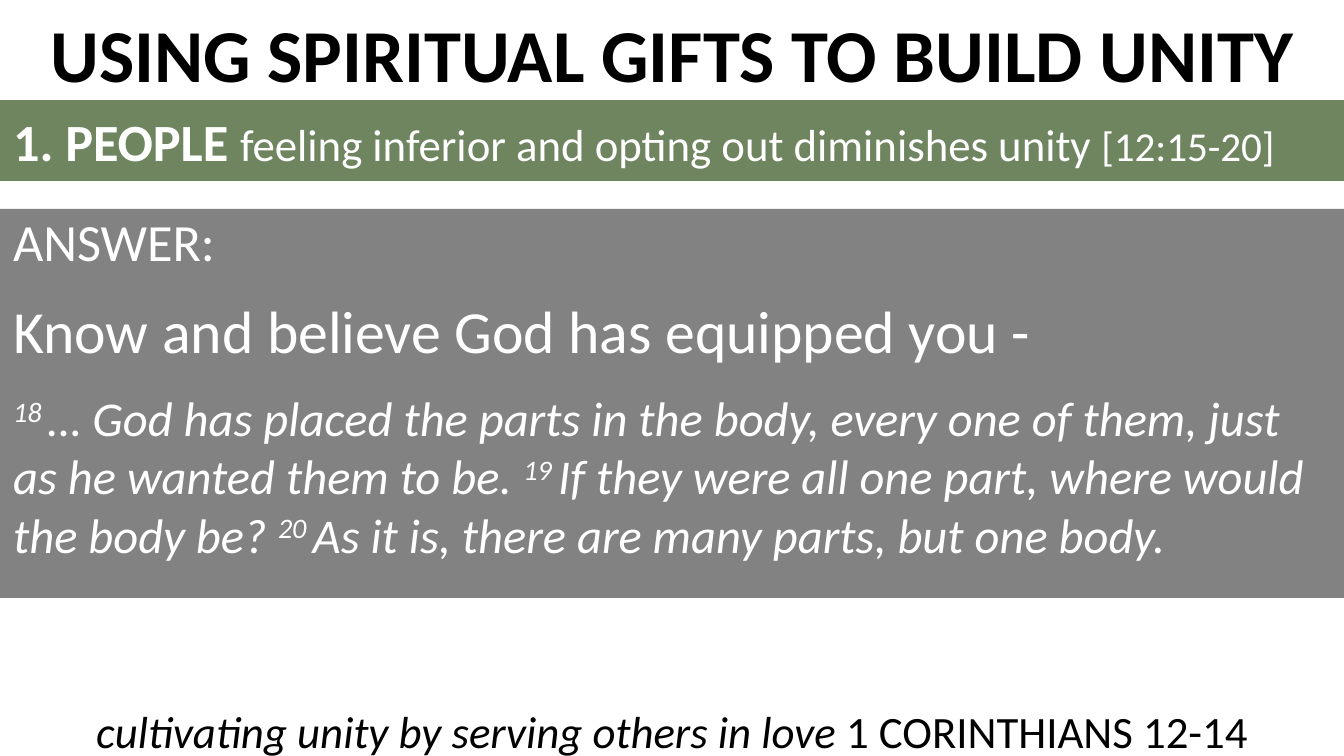
from dataclasses import dataclass

from lxml import etree
from pptx import Presentation
from pptx import util as u
from pptx.dml.color import RGBColor
from pptx.enum import shapes, text
from pptx.oxml.ns import qn

EMU_PER_PX = 914400 / 134.4
WIDTH, HEIGHT = 1344, 756


def px(n):
    return u.Emu(round(n * EMU_PER_PX))


@dataclass(frozen=True)
class Theme:
    font: str = "Calibri"
    ink: str = "000000"
    paper: str = "FFFFFF"
    green: str = "385723"
    gray: str = "595959"
    title: int = 40
    answer: int = 32
    lead: int = 28
    verse: int = 26
    body: int = 24
    reference: int = 22


THEME = Theme()


def run(words, **fmt):
    """Pair a piece of text with its format: size, bold, italic, sup."""
    return words, fmt


class Slide:
    def __init__(self, prs, theme):
        self.theme = theme
        self.s = prs.slides.add_slide(prs.slide_layouts[6])

    def fill_text(self, sp, paragraphs, color, anchor,
                  align=text.PP_ALIGN.LEFT, gap=0, spacing=1.0):
        tf = sp.text_frame
        tf.word_wrap = True
        tf.vertical_anchor = anchor
        for i, runs in enumerate(paragraphs):
            p = tf.add_paragraph() if i else tf.paragraphs[0]
            p.alignment = align
            p.line_spacing = spacing
            if i and gap:
                p.space_before = u.Pt(gap)
            for words, fmt in runs:
                r = p.add_run()
                r.text = words
                r.font.name = self.theme.font
                r.font.size = u.Pt(fmt["size"])
                r.font.bold = fmt.get("bold", False)
                r.font.italic = fmt.get("italic", False)
                r.font.color.rgb = RGBColor.from_string(color)
                if fmt.get("sup"):
                    r._r.get_or_add_rPr().set("baseline", "30000")

    def label(self, top, height, runs, anchor):
        sp = self.s.shapes.add_textbox(0, px(top), px(WIDTH), px(height))
        self.fill_text(sp, [runs], self.theme.ink, anchor,
                       align=text.PP_ALIGN.CENTER, spacing=0.9)

    def band(self, top, height, fill, opacity, paragraphs,
             anchor=text.MSO_ANCHOR.MIDDLE, gap=0):
        sp = self.s.shapes.add_shape(shapes.MSO_SHAPE.RECTANGLE,
                                     0, px(top), px(WIDTH), px(height))
        sp.shadow.inherit = False
        sp.line.fill.background()
        sp.fill.solid()
        sp.fill.fore_color.rgb = RGBColor.from_string(fill)
        clr = sp._element.spPr.find(qn("a:solidFill"))[0]
        etree.SubElement(clr, qn("a:alpha")).set("val", str(opacity * 1000))
        sp.text_frame.margin_top = sp.text_frame.margin_bottom = 0
        self.fill_text(sp, paragraphs, self.theme.paper, anchor, gap=gap)


def main():
    t = THEME
    prs = Presentation()
    prs.slide_width, prs.slide_height = px(WIDTH), px(HEIGHT)
    slide = Slide(prs, t)

    # Title
    slide.label(0, 105, [run("USING SPIRITUAL GIFTS TO BUILD UNITY",
                             size=t.title, bold=True)], text.MSO_ANCHOR.BOTTOM)

    # Point heading
    slide.band(100, 81, t.green, 72, [[
        run("1. PEOPLE ", size=t.lead, bold=True),
        run("feeling inferior and opting out diminishes unity ", size=t.body),
        run("[12:15-20]", size=t.reference),
    ]])

    # Answer with numbered verses
    verses = [
        ("18 ", "… God has placed the parts in the body, every one of them, "
                "just as he wanted them to be. "),
        ("19 ", "If they were all one part, where would the body be? "),
        ("20 ", "As it is, there are many parts, but one body."),
    ]
    passage = []
    for number, words in verses:
        passage += [run(number, size=t.verse, italic=True, sup=True),
                    run(words, size=t.verse, italic=True)]
    slide.band(209, 389, t.gray, 75, [
        [run("ANSWER:", size=t.lead)],
        [run("Know and believe God has equipped you -", size=t.answer)],
        passage,
    ], anchor=text.MSO_ANCHOR.TOP, gap=12)

    # Series footer
    slide.label(703, 86, [
        run("cultivating unity by serving others in love ",
            size=t.body, italic=True),
        run("1 CORINTHIANS 12-14", size=t.body),
    ], text.MSO_ANCHOR.TOP)

    prs.save("out.pptx")


if __name__ == "__main__":
    main()
